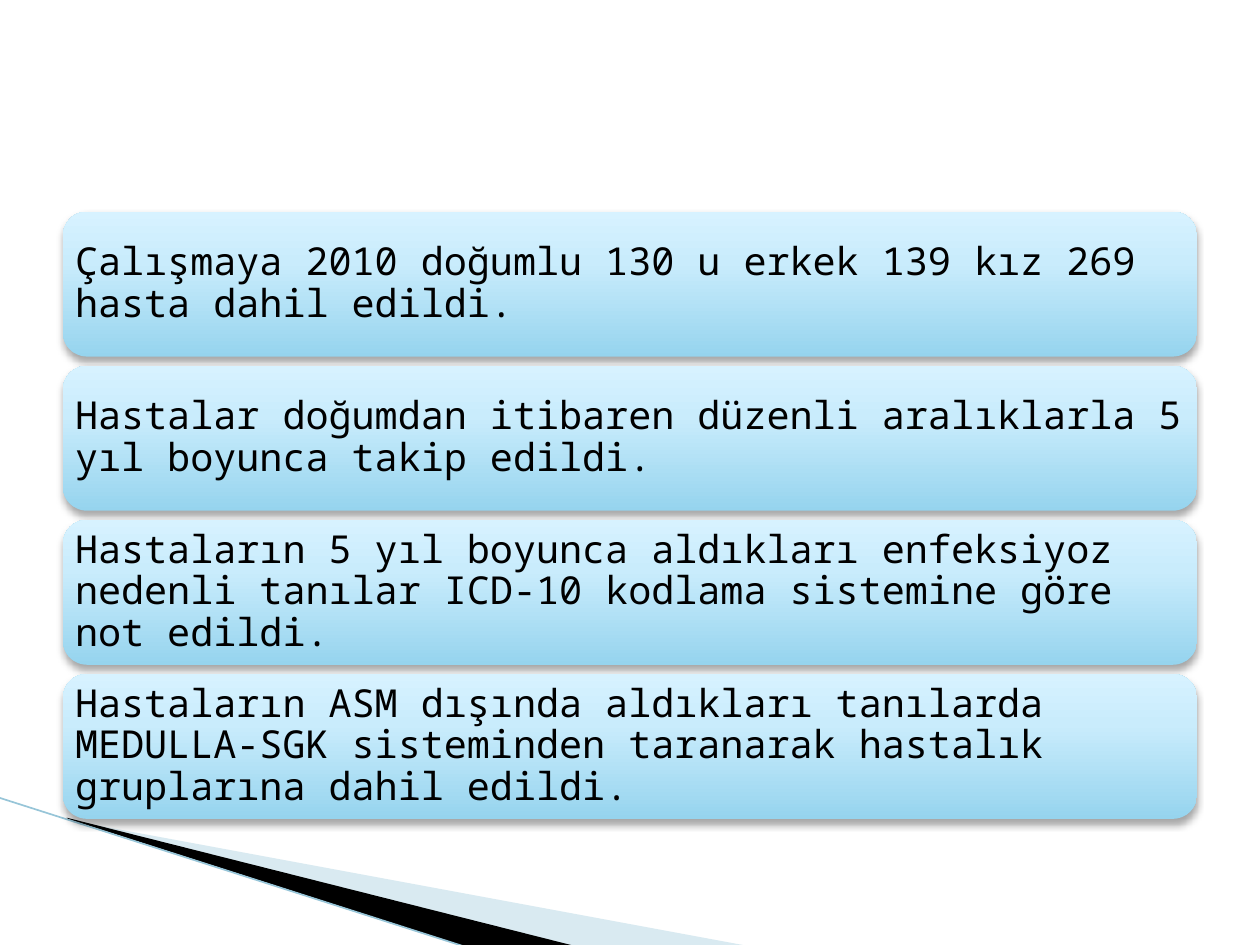
from dataclasses import dataclass

import pptx
import pptx.dml.color
import pptx.enum.dml
import pptx.enum.shapes
import pptx.enum.text
import pptx.oxml
import pptx.oxml.ns
import pptx.util
from pptx.util import Inches

qn = pptx.oxml.ns.qn
NAMESPACE = pptx.oxml.ns.nsdecls("a")


@dataclass(frozen=True)
class Theme:
    font: str = "Noto Sans Mono"
    text_size: float = 22
    text: str = "000000"
    card_stops: tuple = ((0, "96D4EE"), (65, "C9ECFC"), (100, "D7F2FF"))
    wedge_light: str = "A0CBDC"
    wedge_dark: str = "000000"
    edge_line: str = "97C5D8"
    edge_width: float = 0.95


@dataclass(frozen=True)
class Wedge:
    points: tuple
    color: str
    opacity: int = 100


THEME = Theme()

WEDGES = (
    Wedge(((0.55, 6.51), (5.95, 7.51), (4.56, 7.51), (0.55, 6.5)), THEME.wedge_light, 40),
    Wedge(((0.53, 6.49), (4.57, 7.51), (3.72, 7.52), (0.54, 6.5)), THEME.wedge_dark),
)

STATEMENTS = (
    "Çalışmaya 2010 doğumlu 130 u erkek 139 kız 269 hasta dahil edildi.",
    "Hastalar doğumdan itibaren düzenli aralıklarla 5 yıl boyunca takip edildi.",
    "Hastaların 5 yıl boyunca aldıkları enfeksiyoz nedenli tanılar ICD-10 kodlama "
    "sistemine göre not edildi.",
    "Hastaların ASM dışında aldıkları tanılarda MEDULLA-SGK sisteminden taranarak "
    "hastalık gruplarına dahil edildi.",
)
CARD_LEFT, CARD_TOP, CARD_WIDTH, CARD_HEIGHT = 0.5, 1.68, 9, 1.15
CARD_PITCH = 1.223


def rgb(color: str) -> pptx.dml.color.RGBColor:
    return pptx.dml.color.RGBColor.from_string(color)


def add_wedge(slide, wedge: Wedge) -> None:
    points = [(Inches(x), Inches(y)) for x, y in wedge.points]
    builder = slide.shapes.build_freeform(*points[0])
    builder.add_line_segments(points[1:], close=True)
    shape = builder.convert_to_shape()
    shape.shadow.inherit = False
    shape.fill.solid()
    shape.fill.fore_color.rgb = rgb(wedge.color)
    shape.line.fill.background()
    if wedge.opacity < 100:
        color = shape._element.spPr.find(qn("a:solidFill"))[0]
        color.append(pptx.oxml.parse_xml(
            f'<a:alpha {NAMESPACE} val="{wedge.opacity * 1000}"/>'))


def add_edge_line(slide) -> None:
    line = slide.shapes.add_connector(
        pptx.enum.shapes.MSO_CONNECTOR.STRAIGHT,
        Inches(-0.01), Inches(6.33), Inches(3.71), Inches(7.52))
    line.line.color.rgb = rgb(THEME.edge_line)
    line.line.width = pptx.util.Pt(THEME.edge_width)
    line._element.spPr.append(pptx.oxml.parse_xml(f"<a:effectLst {NAMESPACE}/>"))


def style_card(shape) -> None:
    """Give the card its vertical gradient and soft shadow."""
    shape.fill.gradient()
    shape.fill.gradient_angle = 90
    stops = shape._element.spPr.find(qn("a:gradFill")).find(qn("a:gsLst"))
    for stop in list(stops):
        stops.remove(stop)
    for position, color in THEME.card_stops:
        stops.append(pptx.oxml.parse_xml(
            f'<a:gs {NAMESPACE} pos="{position * 1000}"><a:srgbClr val="{color}"/></a:gs>'))
    shape.line.fill.background()
    shape.shadow.inherit = False
    shape._element.spPr.find(qn("a:effectLst")).append(pptx.oxml.parse_xml(
        f'<a:outerShdw {NAMESPACE} blurRad="{pptx.util.Pt(4)}" dist="{pptx.util.Pt(3)}" '
        'dir="5400000" rotWithShape="0">'
        '<a:srgbClr val="000000"><a:alpha val="35000"/></a:srgbClr></a:outerShdw>'))


def add_card(slide, top: float, text: str) -> None:
    shape = slide.shapes.add_shape(
        pptx.enum.shapes.MSO_SHAPE.ROUNDED_RECTANGLE,
        Inches(CARD_LEFT), Inches(top), Inches(CARD_WIDTH), Inches(CARD_HEIGHT))
    style_card(shape)
    frame = shape.text_frame
    frame.word_wrap = True
    frame.vertical_anchor = pptx.enum.text.MSO_ANCHOR.MIDDLE
    # The rounded corners already inset the text a little
    frame.margin_left = frame.margin_right = Inches(0.04)
    frame.margin_top = frame.margin_bottom = Inches(0.04)
    paragraph = frame.paragraphs[0]
    paragraph.text = text
    paragraph.alignment = pptx.enum.text.PP_ALIGN.LEFT
    paragraph.line_spacing = 0.9
    paragraph.font.name = THEME.font
    paragraph.font.size = pptx.util.Pt(THEME.text_size)
    paragraph.font.color.rgb = rgb(THEME.text)


def main() -> None:
    presentation = pptx.Presentation()
    presentation.slide_width = Inches(10)
    presentation.slide_height = Inches(7.5)
    slide = presentation.slides.add_slide(presentation.slide_layouts[6])

    # Corner decoration
    for wedge in WEDGES:
        add_wedge(slide, wedge)
    add_edge_line(slide)

    # Stacked statements
    for index, text in enumerate(STATEMENTS):
        add_card(slide, CARD_TOP + index * CARD_PITCH, text)

    presentation.save("out.pptx")


if __name__ == "__main__":
    main()
